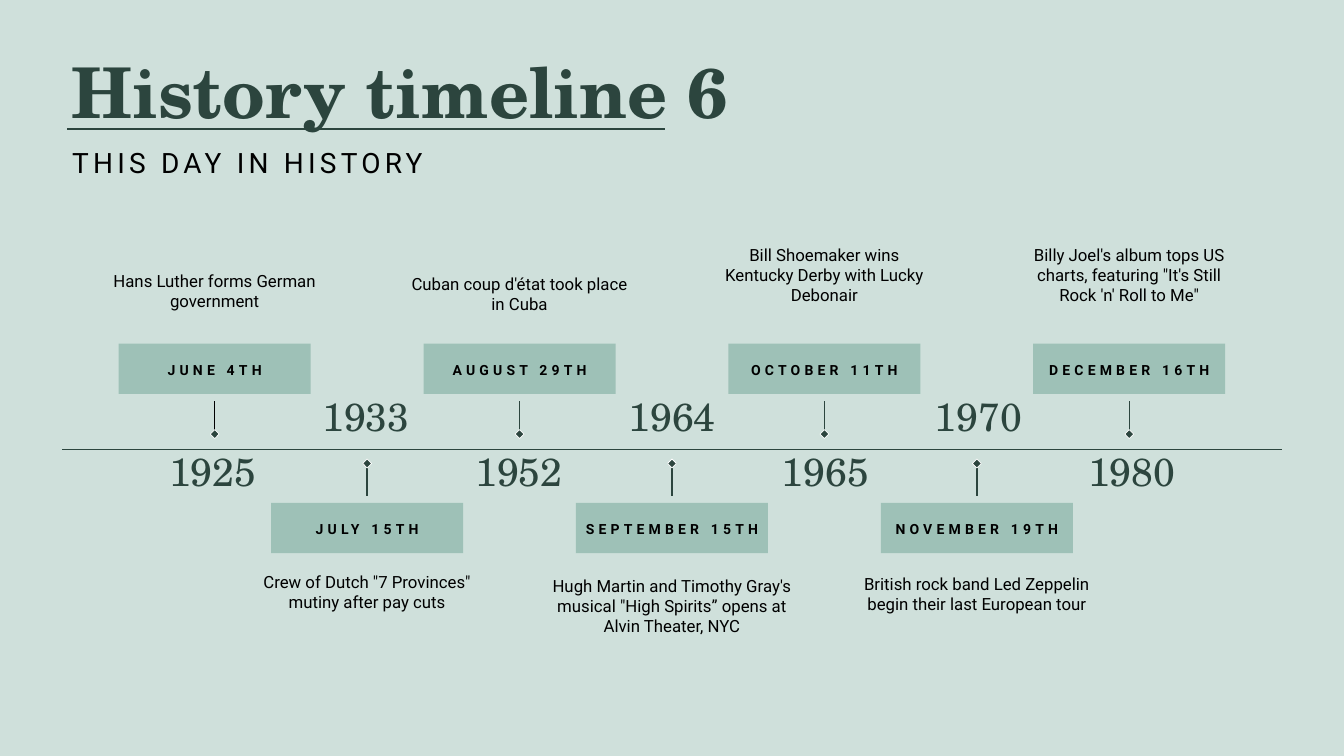
from lxml import etree
from pptx import Presentation
from pptx.dml.color import RGBColor
from pptx.enum.shapes import MSO_CONNECTOR, MSO_SHAPE
from pptx.enum.text import MSO_ANCHOR, MSO_AUTO_SIZE, PP_ALIGN
from pptx.oxml.ns import qn
from pptx.util import Cm, Pt

STRAIGHT = MSO_CONNECTOR.STRAIGHT
RECTANGLE = MSO_SHAPE.RECTANGLE
TOP, MIDDLE = MSO_ANCHOR.TOP, MSO_ANCHOR.MIDDLE
LEFT, CENTER = PP_ALIGN.LEFT, PP_ALIGN.CENTER
NO_AUTOFIT = MSO_AUTO_SIZE.NONE

MINT, SAGE, FOREST = "CFE0DB", "9EC1B7", "2C453E"
BLACK, WHITE = "000000", "FFFFFF"
SERIF, SANS = "TeX Gyre Schola", "Roboto"

EVENTS = [
    ("1925", "JUNE 4TH", "Hans Luther forms German government", 6.53),
    ("1933", "JULY 15TH", "Crew of Dutch \"7 Provinces\" mutiny after pay cuts", 14.1),
    ("1952", "AUGUST 29TH", "Cuban coup d'état took place in Cuba", 6.6),
    ("1964", "SEPTEMBER 15TH", "Hugh Martin and Timothy Gray's musical \"High Spirits” opens at Alvin Theater, NYC", 14.2),
    ("1965", "OCTOBER 11TH", "Bill Shoemaker wins Kentucky Derby with Lucky Debonair", 5.87),
    ("1970", "NOVEMBER 19TH", "British rock band Led Zeppelin begin their last European tour", 14.15),
    ("1980", "DECEMBER 16TH", "Billy Joel's album tops US charts, featuring \"It's Still Rock 'n' Roll to Me\"", 5.87),
]


def colour(value):
    return RGBColor.from_string(value)


def write(shape, text, size, font, ink=BLACK, bold=False, align=CENTER,
          anchor=TOP, insets=(0.25, 0.13, 0.25, 0.13), leading=1.0, tracking=0):
    frame = shape.text_frame
    frame.text = text
    frame.word_wrap = True
    frame.auto_size = NO_AUTOFIT
    frame.vertical_anchor = anchor
    (frame.margin_left, frame.margin_top,
     frame.margin_right, frame.margin_bottom) = map(Cm, insets)
    paragraph = frame.paragraphs[0]
    paragraph.alignment = align
    paragraph.line_spacing = leading
    for run in paragraph.runs:
        run.font.size = Pt(size)
        run.font.name = font
        run.font.bold = bold
        run.font.color.rgb = colour(ink)
        if tracking:
            run.font._element.set("spc", str(tracking * 100))


def add_text(slide, box, text, size, font, **style):
    write(slide.shapes.add_textbox(*map(Cm, box)), text, size, font, **style)


def add_rule(slide, x1, y1, x2, y2, ink=FOREST):
    rule = slide.shapes.add_connector(STRAIGHT, *map(Cm, (x1, y1, x2, y2)))
    rule.line.color.rgb = colour(ink)
    rule.line.width = Pt(1)
    etree.SubElement(rule._element.spPr, qn("a:effectLst"))


def add_block(slide, box, fill):
    block = slide.shapes.add_shape(RECTANGLE, *map(Cm, box))
    block.shadow.inherit = False
    block.fill.solid()
    block.fill.fore_color.rgb = colour(fill)
    block.line.fill.background()
    return block


def add_heading(slide, left, top, width):
    add_rule(slide, left + 0.15, top + 2.26, left + 15.21, top + 2.26)
    title = slide.shapes.title
    title.left, title.top, title.width, title.height = map(Cm, (left, top, width, 2.62))
    write(title, "History timeline 6", 50, SERIF, ink=FOREST, bold=True, align=LEFT,
          anchor=MIDDLE, insets=(0.25, 0.25, 0.25, 0), leading=0.9)
    add_text(slide, (left + 0.02, top + 2.64, width, 1.12), "THIS DAY IN HISTORY",
             20, SANS, align=LEFT, leading=0.9, tracking=3)


def add_event(slide, centre, axis, event, above, year_centre, stem_ink):
    year, date, caption, caption_top = event
    if above:
        date_top, stem_top, dot_y = axis - 2.67, axis - 1.22, axis - 0.39
        year_top, caption_width = axis - 0.05, 6.1
    else:
        date_top, stem_top, dot_y = axis + 1.34, axis + 0.4, axis + 0.35
        year_top, caption_width = axis - 1.45, 6.76

    date_block = add_block(slide, (centre - 2.42, date_top, 4.84, 1.27), SAGE)
    write(date_block, date, 10, SANS, bold=True, anchor=MIDDLE,
          insets=(0, 0, 0, 0), leading=1.1, tracking=3)
    add_text(slide, (centre - caption_width / 2, caption_top, caption_width, 2.5),
             caption, 12, SANS, insets=(0.3, 0.3, 0.3, 0.3))
    add_rule(slide, centre, stem_top, centre, stem_top + 0.76, stem_ink)
    dot = add_block(slide, (centre - 0.08, dot_y - 0.08, 0.16, 0.16), FOREST)
    dot.rotation = 45
    dot.line.color.rgb = colour(WHITE)
    dot.line.width = Pt(0.5)
    add_text(slide, (year_centre - 1.52, year_top, 3.04, 1.52), year, 28, SERIF,
             ink=FOREST, leading=0.9)


def add_timeline(slide, left, axis, width):
    add_rule(slide, left, axis, left + width, axis)
    step = width / 8
    for index, event in enumerate(EVENTS):
        add_event(slide, left + step * (index + 1), axis, event, index % 2 == 0,
                  left + 3.79 + 3.86 * index, FOREST if index else BLACK)


def main():
    deck = Presentation()
    deck.slide_width, deck.slide_height = Cm(33.87), Cm(19.05)
    slide = deck.slides.add_slide(deck.slide_layouts[5])
    slide.background.fill.solid()
    slide.background.fill.fore_color.rgb = colour(MINT)
    add_heading(slide, 1.55, 0.99, 30.73)
    add_timeline(slide, 1.57, 11.33, 30.73)
    deck.save("out.pptx")


if __name__ == "__main__":
    main()
